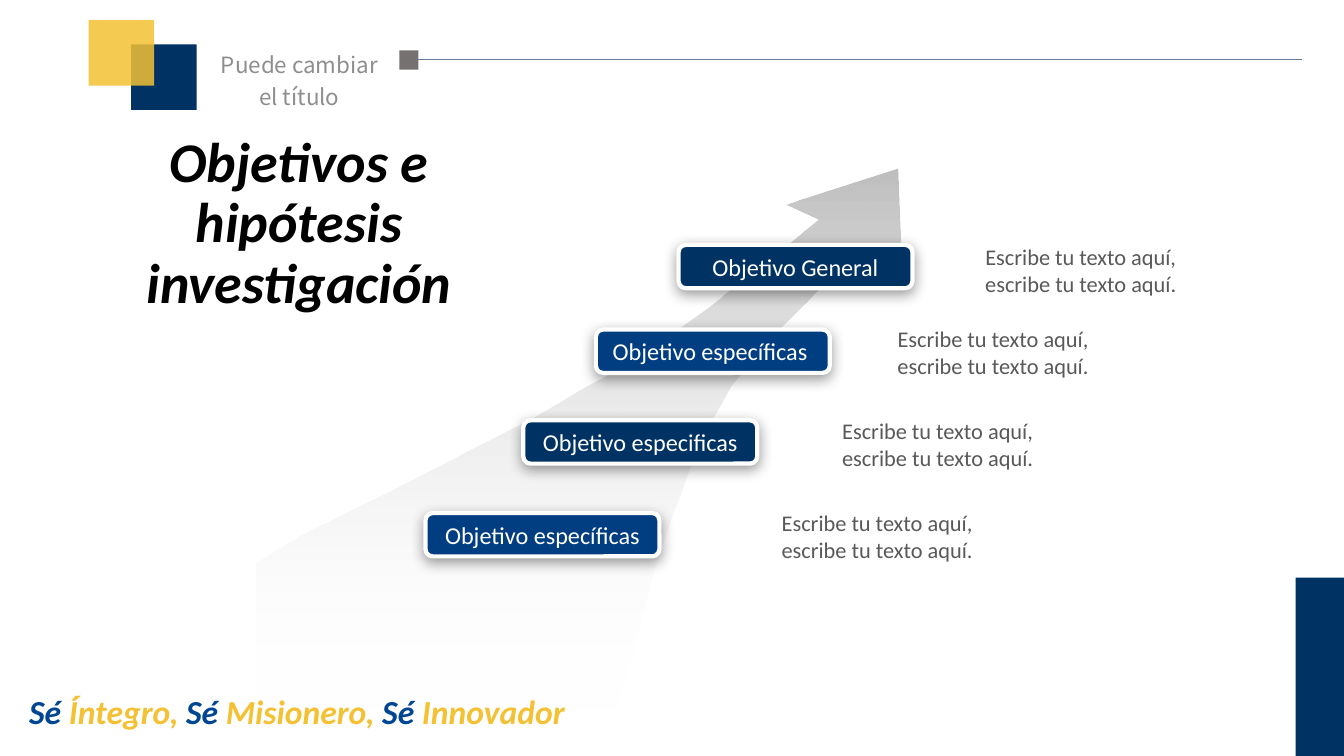
from pptx import Presentation
from pptx.util import Inches, Pt
from pptx.dml.color import RGBColor as Rgb
from pptx.enum.dml import MSO_LINE as Dash
from pptx.enum.shapes import MSO_CONNECTOR as Link, MSO_SHAPE as Kind
from pptx.enum.text import MSO_ANCHOR as Anchor, MSO_AUTO_SIZE as Fit, PP_ALIGN as Align
from pptx.oxml import parse_xml
from pptx.oxml.ns import nsdecls, qn

NAVY, BLUE, GOLD, WHITE = "003264", "003E81", "F3C133", "FFFFFF"
FONT = "Calibri"
TITLE = "Objetivos e hipótesis investigación"
HINT = "Puede cambiar el título"
NOTE = "Escribe tu texto aquí, escribe tu texto aquí."
STEPS = [
    ("Objetivo específicas", BLUE, (4.22, 5.09), (7.55, 5)),
    ("Objetivo especificas", NAVY, (5.19, 4.17), (8.15, 4.09)),
    ("Objetivo específicas ", BLUE, (5.91, 3.27), (8.7, 3.18)),
    ("Objetivo General", NAVY, (6.73, 2.43), (9.57, 2.36)),
]
MOTTO = [("Sé", " Íntegro, "), ("Sé", " Misionero, "), ("Sé", " Innovador")]
BLOCKS = [
    ((3.96, 0.5, 0.19, 0.19), "767171"),
    ((1.3, 0.44, 0.65, 0.65), NAVY),
    ((0.88, 0.2, 0.65, 0.65), GOLD),
    ((12.85, 5.73, 0.48, 1.77), NAVY),
]
ARROW = [
    (2.54, 5.58), (2.98, 5.31), (3.44, 5.08), (3.93, 4.84), (4.55, 4.52),
    (5.31, 4.13), (5.8, 3.84), (6.14, 3.66), (6.59, 3.36), (7, 3.07),
    (7.37, 2.77), (7.67, 2.54), (8.11, 2.18), (7.79, 2.03), (8.9, 1.67),
    (8.94, 2.65), (8.58, 2.42), (8.14, 2.85), (7.62, 3.38), (7.25, 3.83),
    (7.07, 4.15), (6.89, 4.48), (6.79, 4.78), (6.68, 5.07), (6.49, 5.63),
    (6.35, 6.16), (6.24, 6.58), (6.1, 7.06), (2.54, 7.06),
]


def tint(code):
    return Rgb.from_string(code)


def fade(shape, spot, share):
    node = list(shape._element.spPr.iter(qn("a:srgbClr")))[spot]
    node.append(parse_xml(f'<a:alpha {nsdecls("a")} val="{share * 1000}"/>'))


def write(shape, runs, size, align=Align.CENTER, anchor=Anchor.TOP,
          pad=(0.09, 0.05), bold=None, wrap=True, fit=Fit.NONE, gap=None):
    frame = shape.text_frame
    frame.word_wrap, frame.auto_size = wrap, fit
    frame.vertical_anchor = anchor
    frame.margin_left = frame.margin_right = Inches(pad[0])
    frame.margin_top = frame.margin_bottom = Inches(pad[1])
    line = frame.paragraphs[0]
    line.alignment, line.line_spacing = align, gap
    for text, code, face in runs:
        run = line.add_run()
        run.text = text
        font = run.font
        font.name, font.size = face, Pt(size)
        font.bold = font.italic = bold
        font.color.rgb = tint(code)


def draw(kind, box, fill=None, edge=None, width=0):
    shape = slide.shapes.add_shape(kind, *map(Inches, box))
    shape.shadow.inherit = False
    if fill:
        shape.fill.solid()
        shape.fill.fore_color.rgb = tint(fill)
    else:
        shape.fill.background()
    if edge:
        shape.line.color.rgb = tint(edge)
        shape.line.width = Pt(width)
    else:
        shape.line.fill.background()
    return shape


def cast(shape):
    glow = shape._element.spPr.find(qn("a:effectLst"))
    glow.append(parse_xml(
        f'<a:outerShdw {nsdecls("a")} blurRad="{Pt(10)}" dist="{Pt(3)}" '
        'dir="5400000" algn="t" rotWithShape="0"><a:srgbClr val="000000">'
        '<a:alpha val="40000"/></a:srgbClr></a:outerShdw>'))


deck = Presentation()
deck.slide_width, deck.slide_height = Inches(13.33), Inches(7.5)
slide = deck.slides.add_slide(deck.slide_layouts[5])

title = slide.shapes.title
title.left, title.top, title.width, title.height = map(Inches, (0.63, 1.77, 4.67, 1.41))
write(title, [(TITLE, "000000", FONT)], 40, anchor=Anchor.BOTTOM,
      pad=(0.1, 0.05), bold=True, gap=0.9)

rule = slide.shapes.add_connector(Link.STRAIGHT, *map(Inches, (12.91, 0.59, 4.15, 0.59)))
rule.line.color.rgb, rule.line.width = tint("657D9D"), Pt(0.5)
rule._element.spPr.append(parse_xml(f'<a:effectLst {nsdecls("a")}/>'))

for box, code in BLOCKS:
    block = draw(Kind.RECTANGLE, box, code)
    if code == GOLD:
        fade(block, 0, 85)

hint = slide.shapes.add_textbox(*map(Inches, (2.1, 0.45, 1.74, 0.36)))
write(hint, [(HINT, "8E8E8E", "Noto Sans CJK SC")], 16, pad=(0, 0), gap=1.2)

start, *rest = [(Inches(x), Inches(y)) for x, y in ARROW]
path = slide.shapes.build_freeform(*start)
path.add_line_segments(rest, close=True)
arrow = path.convert_to_shape()
arrow.shadow.inherit = False
arrow.line.fill.background()
arrow.fill.gradient()
arrow.fill.gradient_angle = 270
for stop, code in zip(arrow.fill.gradient_stops, ("BFBFBF", WHITE)):
    stop.color.rgb = tint(code)
fade(arrow, 1, 0)

for name, code, spot, place in STEPS:
    label = draw(Kind.ROUNDED_RECTANGLE, (*spot, 2.32, 0.43), code, WHITE, 3)
    cast(label)
    write(label, [(name, WHITE, FONT)], 17.3, anchor=Anchor.MIDDLE)
    note = draw(Kind.RECTANGLE, (*place, 2.3, 0.63), None, WHITE, 0.75)
    note.line.dash_style = Dash.DASH
    write(note, [(NOTE, "595959", FONT)], 16, fit=Fit.SHAPE_TO_FIT_TEXT)

motto = slide.shapes.add_textbox(*map(Inches, (0.19, 6.81, 5.56, 0.5)))
words = [(text, code, FONT) for pair in MOTTO for text, code in zip(pair, ("004692", GOLD))]
write(motto, words, 24, align=Align.LEFT, pad=(0.1, 0.05), bold=True,
      wrap=False, fit=Fit.SHAPE_TO_FIT_TEXT)

deck.save("out.pptx")
